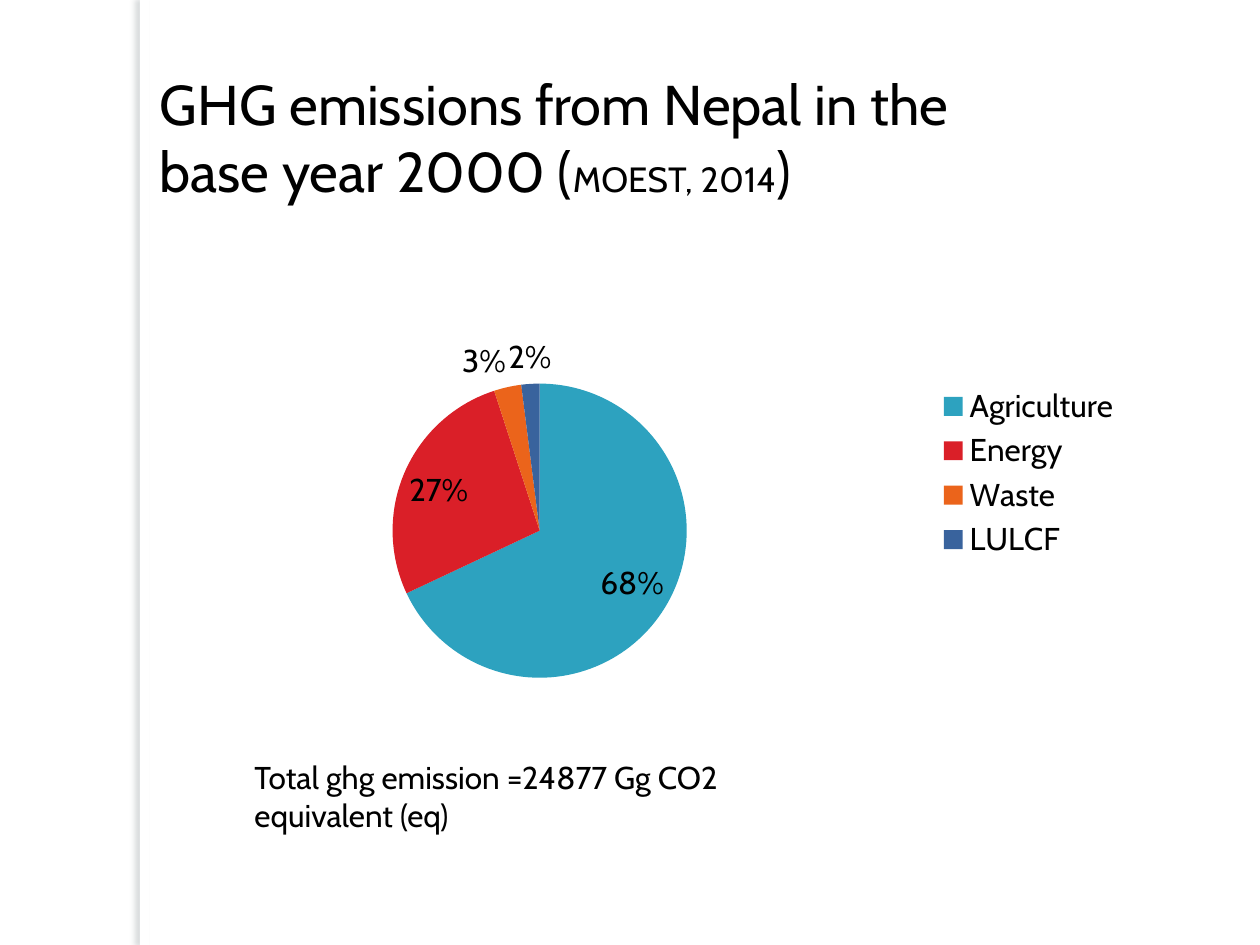
"""Build a slide with a pie chart of greenhouse gas emissions from Nepal."""
from dataclasses import dataclass

from lxml.etree import SubElement
from pptx import Presentation
from pptx.chart.data import CategoryChartData
from pptx.dml.color import RGBColor
from pptx.enum.chart import XL_CHART_TYPE, XL_LABEL_POSITION, XL_LEGEND_POSITION
from pptx.enum.shapes import MSO_SHAPE
from pptx.enum.text import MSO_AUTO_SIZE
from pptx.oxml import parse_xml
from pptx.oxml.ns import nsdecls, qn
from pptx.util import Cm, Pt


@dataclass(frozen=True)
class Theme:
    font: str = "Cabin"
    ink: str = "000000"
    paper: str = "FFFFFF"
    shade: str = "6E7A7D"
    title: int = 32
    cite: int = 20
    body: int = 18
    pie: tuple = ("2DA2BF", "DA1F28", "EB641B", "39639D")


theme = Theme()


def style(font, size):
    font.name = theme.font
    font.size = Pt(size)
    font.color.rgb = RGBColor.from_string(theme.ink)


def write(area, parts):
    box = slide.shapes.add_textbox(*map(Cm, area))
    frame = box.text_frame
    frame.word_wrap = True
    frame.auto_size = MSO_AUTO_SIZE.SHAPE_TO_FIT_TEXT
    for text, size in parts:
        run = frame.paragraphs[0].add_run()
        run.text = text
        style(run.font, size)


deck = Presentation()
deck.slide_width, deck.slide_height = Cm(25.4), Cm(19.05)
slide = deck.slides.add_slide(deck.slide_layouts[6])

strip = slide.shapes.add_shape(
    MSO_SHAPE.RECTANGLE, Cm(2.82), Cm(0), Cm(0.2), deck.slide_height)
strip.fill.solid()
strip.fill.fore_color.rgb = RGBColor.from_string(theme.paper)
strip.line.fill.background()
strip.shadow.inherit = False
glow = SubElement(
    strip._element.spPr.find(qn("a:effectLst")), qn("a:outerShdw"),
    blurRad=str(Pt(3)), dist=str(Pt(3)), dir="10800000", rotWithShape="0")
tint = SubElement(glow, qn("a:srgbClr"), val=theme.shade)
SubElement(tint, qn("a:alpha"), val="25000")

data = CategoryChartData()
data.categories = ["Agriculture", "Energy", "Waste", "LULCF"]
data.add_series("Series 1", (68, 27, 3, 2))
chart = slide.shapes.add_chart(
    XL_CHART_TYPE.PIE, Cm(3.38), Cm(4.24), Cm(19.48), Cm(10.59), data).chart
chart.has_title = False
style(chart.font, theme.body)
chart.has_legend = True
chart.legend.position = XL_LEGEND_POSITION.RIGHT
chart.legend.include_in_layout = False

plot = chart.plots[0]
plot.vary_by_categories = True
for index, color in enumerate(theme.pie):
    fill = plot.series[0].points[index].format.fill
    fill.solid()
    fill.fore_color.rgb = RGBColor.from_string(color)

plot.has_data_labels = True
labels = plot.data_labels
labels.show_percentage = True
labels.show_value = False
labels.number_format = "0%"
labels.number_format_is_linked = False
labels.position = XL_LABEL_POSITION.BEST_FIT
style(labels.font, theme.body)

area = chart._chartSpace.chart.plotArea
for old in area.findall(qn("c:layout")):
    area.remove(old)
layout = parse_xml(f"<c:layout {nsdecls('c')}/>")
area.insert(0, layout)
manual = SubElement(layout, qn("c:manualLayout"))
for key, value in (("layoutTarget", "inner"), ("xMode", "edge"), ("yMode", "edge"),
                   ("x", 0.06), ("y", 0.33), ("w", 0.65), ("h", 0.56)):
    SubElement(manual, qn(f"c:{key}"), val=str(value))

write((2.97, 1.27, 18.85, 3), (
    ("GHG emissions from Nepal in the base year 2000 (", theme.title),
    ("MOEST, 2014", theme.cite),
    (")", theme.title)))
write((4.88, 15.16, 11.89, 1.8), (
    ("Total ghg emission =24877 Gg CO2 equivalent (eq)", theme.body),))

deck.save("out.pptx")
